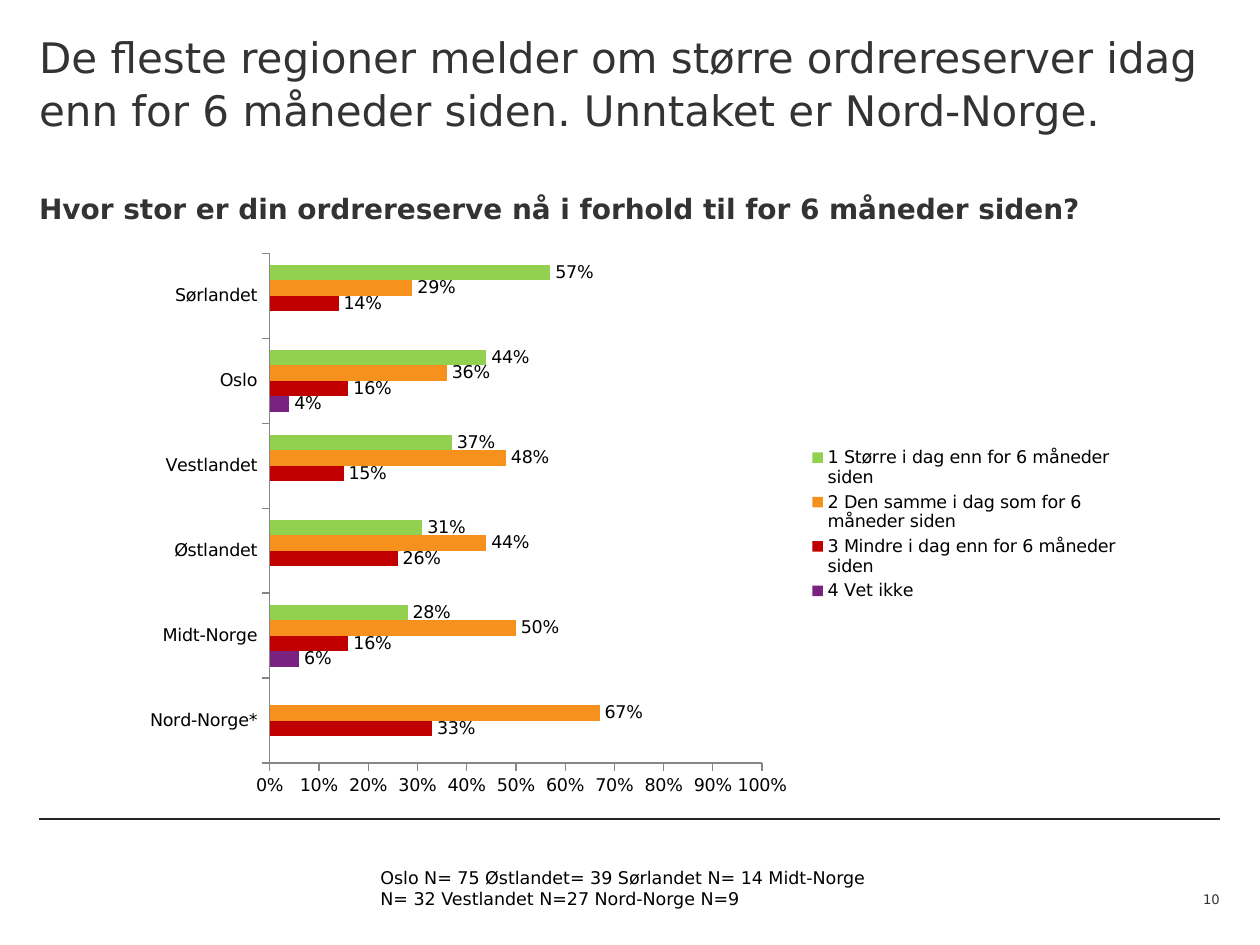
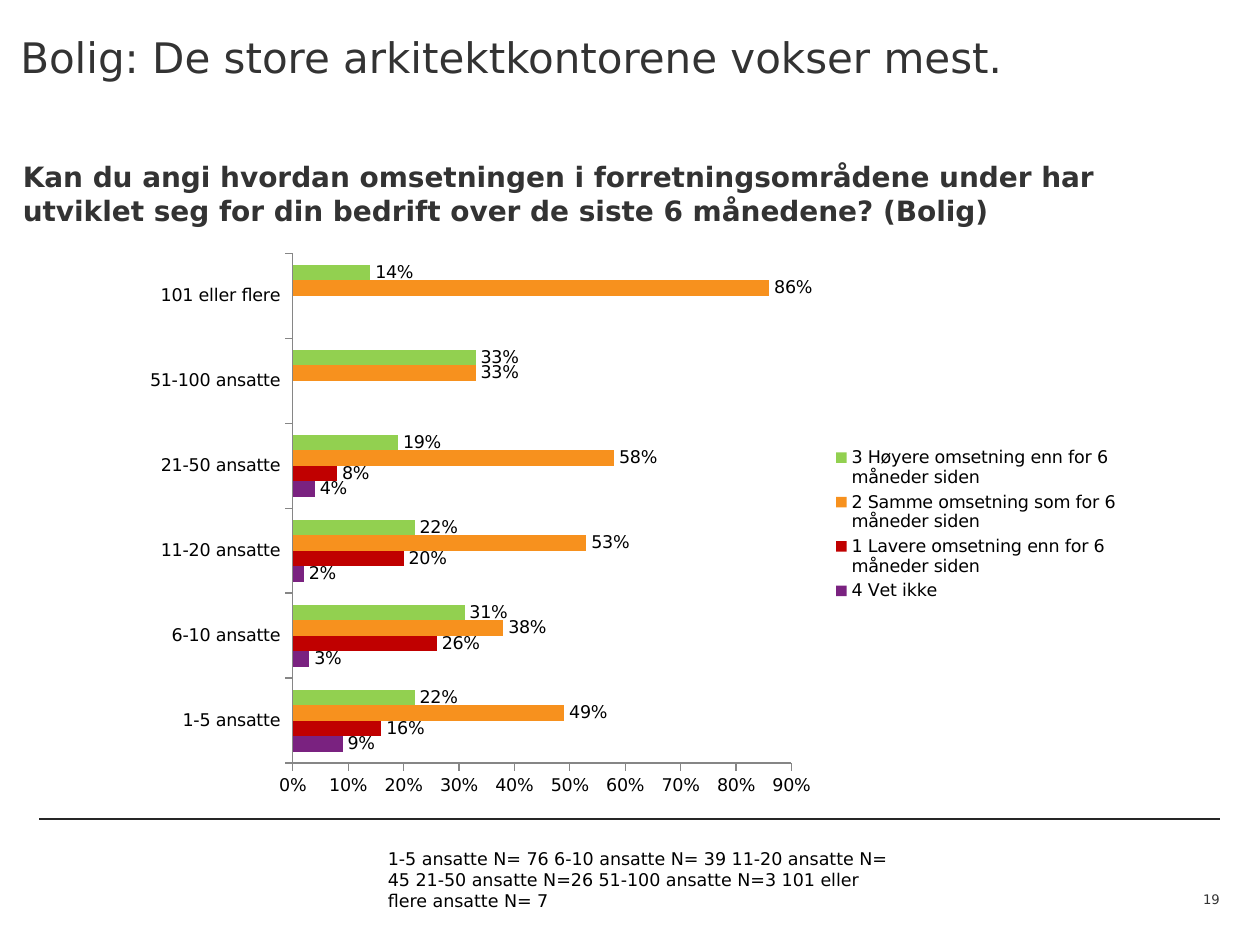
from dataclasses import dataclass

import pptx
import pptx.chart.data
import pptx.dml.color
import pptx.enum.chart
import pptx.enum.shapes
import pptx.enum.text
import pptx.oxml
import pptx.oxml.ns
import pptx.util
from pptx.util import Cm

FONT = "DejaVu Sans"
COLORS = {
    "heading": "333333",
    "text": "000000",
    "rule": "262626",
    "axis": "868686",
    "unknown": "7A2280",
    "lower": "C00000",
    "same": "F7911E",
    "higher": "92D050",
}
MARGIN = 0.79
CONTENT_WIDTH = 23.8
HEADING_INSETS = (0, 0.58, 0, 0)
SAMPLE_INSETS = (0.25, 0.13, 0.51, 0.13)


@dataclass(frozen=True)
class Box:
    """A rectangle in centimetres."""
    left: float
    top: float
    width: float
    height: float

    def lengths(self) -> tuple:
        return Cm(self.left), Cm(self.top), Cm(self.width), Cm(self.height)


@dataclass(frozen=True)
class TextStyle:
    size: float
    color: str
    insets: tuple = (0, 0, 0, 0)
    bold: bool = False
    line_spacing: float = 1.0
    align: object = pptx.enum.text.PP_ALIGN.LEFT
    anchor: object = pptx.enum.text.MSO_ANCHOR.TOP


@dataclass(frozen=True)
class Answer:
    name: str
    color: str
    values: tuple


@dataclass(frozen=True)
class SurveySlide:
    title: str
    title_box: Box
    question: str
    question_box: Box
    sample: str
    sample_box: Box
    page: str
    categories: tuple
    answers: tuple
    axis_maximum: float


TITLE = TextStyle(24, "heading", HEADING_INSETS, line_spacing=1.05)
QUESTION = TextStyle(16, "heading", HEADING_INSETS, bold=True)
SAMPLE = TextStyle(10, "text", SAMPLE_INSETS)
PAGE = TextStyle(7.5, "heading", align=pptx.enum.text.PP_ALIGN.RIGHT,
                 anchor=pptx.enum.text.MSO_ANCHOR.BOTTOM)
PAGE_BOX = Box(23.19, 17.58, 1.4, 0.71)
CHART_BOX = Box(2.62, 4.88, 20.19, 11.38)
RULE_TOP = 16.51

SURVEY_SLIDES = (
    SurveySlide(
        title="De fleste regioner melder om større ordrereserver idag enn for "
              "6 måneder siden. Unntaket er Nord-Norge.",
        title_box=Box(MARGIN, 0, CONTENT_WIDTH, 2.87),
        question="Hvor stor er din ordrereserve nå i forhold til for 6 måneder siden?",
        question_box=Box(MARGIN, 3.28, CONTENT_WIDTH, 2.11),
        sample="Oslo N= 75 Østlandet= 39 Sørlandet N= 14 Midt-Norge N= 32 "
               "Vestlandet N=27 Nord-Norge N=9",
        sample_box=Box(7.42, 17.35, 11.13, 1.12),
        page="10",
        categories=("Nord-Norge*", "Midt-Norge", "Østlandet", "Vestlandet",
                    "Oslo", "Sørlandet"),
        answers=(
            Answer("4 Vet ikke", "unknown", (None, 0.06, None, None, 0.04, None)),
            Answer("3 Mindre i dag enn for 6 måneder siden", "lower",
                   (0.33, 0.16, 0.26, 0.15, 0.16, 0.14)),
            Answer("2 Den samme i dag som for 6 måneder siden", "same",
                   (0.67, 0.5, 0.44, 0.48, 0.36, 0.29)),
            Answer("1 Større i dag enn for 6 måneder siden", "higher",
                   (None, 0.28, 0.31, 0.37, 0.44, 0.57)),
        ),
        axis_maximum=1.0,
    ),
    SurveySlide(
        title="Bolig: De store arkitektkontorene vokser mest.",
        title_box=Box(0.41, 0, 24.69, 2.87),
        question="Kan du angi hvordan omsetningen i forretningsområdene under har "
                 "utviklet seg for din bedrift over de siste 6 månedene? (Bolig)",
        question_box=Box(0.46, 2.64, CONTENT_WIDTH, 2.11),
        sample="1-5 ansatte N= 76 6-10 ansatte N= 39 11-20 ansatte N= 45 "
               "21-50 ansatte N=26 51-100 ansatte N=3 101 eller flere ansatte N= 7",
        sample_box=Box(7.57, 16.97, 11.02, 1.55),
        page="19",
        categories=("1-5 ansatte", "6-10 ansatte", "11-20 ansatte",
                    "21-50 ansatte", "51-100 ansatte", "101 eller flere"),
        answers=(
            Answer("4 Vet ikke", "unknown", (0.09, 0.03, 0.02, 0.04, None, None)),
            Answer("1 Lavere omsetning enn for 6 måneder siden", "lower",
                   (0.16, 0.26, 0.2, 0.08, None, None)),
            Answer("2 Samme omsetning som for 6 måneder siden", "same",
                   (0.49, 0.38, 0.53, 0.58, 0.33, 0.86)),
            Answer("3 Høyere omsetning enn for 6 måneder siden", "higher",
                   (0.22, 0.31, 0.22, 0.19, 0.33, 0.14)),
        ),
        axis_maximum=0.9,
    ),
)


def rgb(name: str) -> pptx.dml.color.RGBColor:
    return pptx.dml.color.RGBColor.from_string(COLORS[name])


def set_font(font, size: float, color: str, bold: bool = False) -> None:
    font.name = FONT
    font.size = pptx.util.Pt(size)
    font.bold = bold
    font.color.rgb = rgb(color)


def add_text(slide, text: str, box: Box, style: TextStyle) -> None:
    text_frame = slide.shapes.add_textbox(*box.lengths()).text_frame
    text_frame.text = text
    text_frame.word_wrap = True
    text_frame.vertical_anchor = style.anchor
    (text_frame.margin_left, text_frame.margin_top, text_frame.margin_right,
     text_frame.margin_bottom) = map(Cm, style.insets)
    paragraph = text_frame.paragraphs[0]
    paragraph.alignment = style.align
    paragraph.line_spacing = style.line_spacing
    set_font(paragraph.runs[0].font, style.size, style.color, style.bold)


def add_footer_rule(slide) -> None:
    connector = slide.shapes.add_connector(
        pptx.enum.shapes.MSO_CONNECTOR.STRAIGHT,
        Cm(MARGIN), Cm(RULE_TOP), Cm(MARGIN + CONTENT_WIDTH), Cm(RULE_TOP))
    connector.line.color.rgb = rgb("rule")
    connector.line.width = pptx.util.Pt(0.75)
    properties = connector._element.spPr
    properties.append(pptx.oxml.parse_xml(
        f"<a:effectLst {pptx.oxml.ns.nsdecls('a')}/>"))


def format_axis(axis) -> None:
    axis.has_major_gridlines = False
    axis.major_tick_mark = pptx.enum.chart.XL_TICK_MARK.OUTSIDE
    axis.minor_tick_mark = pptx.enum.chart.XL_TICK_MARK.NONE
    axis.format.line.color.rgb = rgb("axis")
    axis.format.line.width = pptx.util.Pt(0.75)


def add_answer_chart(slide, survey: SurveySlide) -> None:
    chart_data = pptx.chart.data.CategoryChartData(number_format="0%")
    chart_data.categories = survey.categories
    for answer in survey.answers:
        chart_data.add_series(answer.name, answer.values)
    chart = slide.shapes.add_chart(
        pptx.enum.chart.XL_CHART_TYPE.BAR_CLUSTERED,
        *CHART_BOX.lengths(), chart_data).chart
    set_font(chart.font, 10, "text")
    chart.has_title = False
    chart.has_legend = True
    chart.legend.position = pptx.enum.chart.XL_LEGEND_POSITION.RIGHT
    chart.legend.include_in_layout = False

    format_axis(chart.category_axis)
    value_axis = chart.value_axis
    format_axis(value_axis)
    value_axis.minimum_scale = 0
    value_axis.maximum_scale = survey.axis_maximum
    value_axis.major_unit = 0.1
    value_axis.tick_labels.number_format = "0%"
    value_axis.tick_labels.number_format_is_linked = False

    plot = chart.plots[0]
    plot.gap_width = 150
    plot.vary_by_categories = False
    for series, answer in zip(plot.series, survey.answers):
        series.format.fill.solid()
        series.format.fill.fore_color.rgb = rgb(answer.color)
        series.invert_if_negative = False
        labels = series.data_labels
        labels.show_value = True
        labels.number_format = "0%"
        labels.number_format_is_linked = False
        labels.position = pptx.enum.chart.XL_LABEL_POSITION.OUTSIDE_END
        set_font(labels.font, 10, "text")


def add_survey_slide(presentation, survey: SurveySlide) -> None:
    slide = presentation.slides.add_slide(presentation.slide_layouts[6])
    add_footer_rule(slide)
    add_text(slide, survey.title, survey.title_box, TITLE)
    add_text(slide, survey.page, PAGE_BOX, PAGE)
    add_text(slide, survey.question, survey.question_box, QUESTION)
    add_answer_chart(slide, survey)
    add_text(slide, survey.sample, survey.sample_box, SAMPLE)


def main() -> None:
    presentation = pptx.Presentation()
    presentation.slide_width = Cm(25.4)
    presentation.slide_height = Cm(19.05)
    for survey in SURVEY_SLIDES:
        add_survey_slide(presentation, survey)
    presentation.save("out.pptx")


if __name__ == "__main__":
    main()
